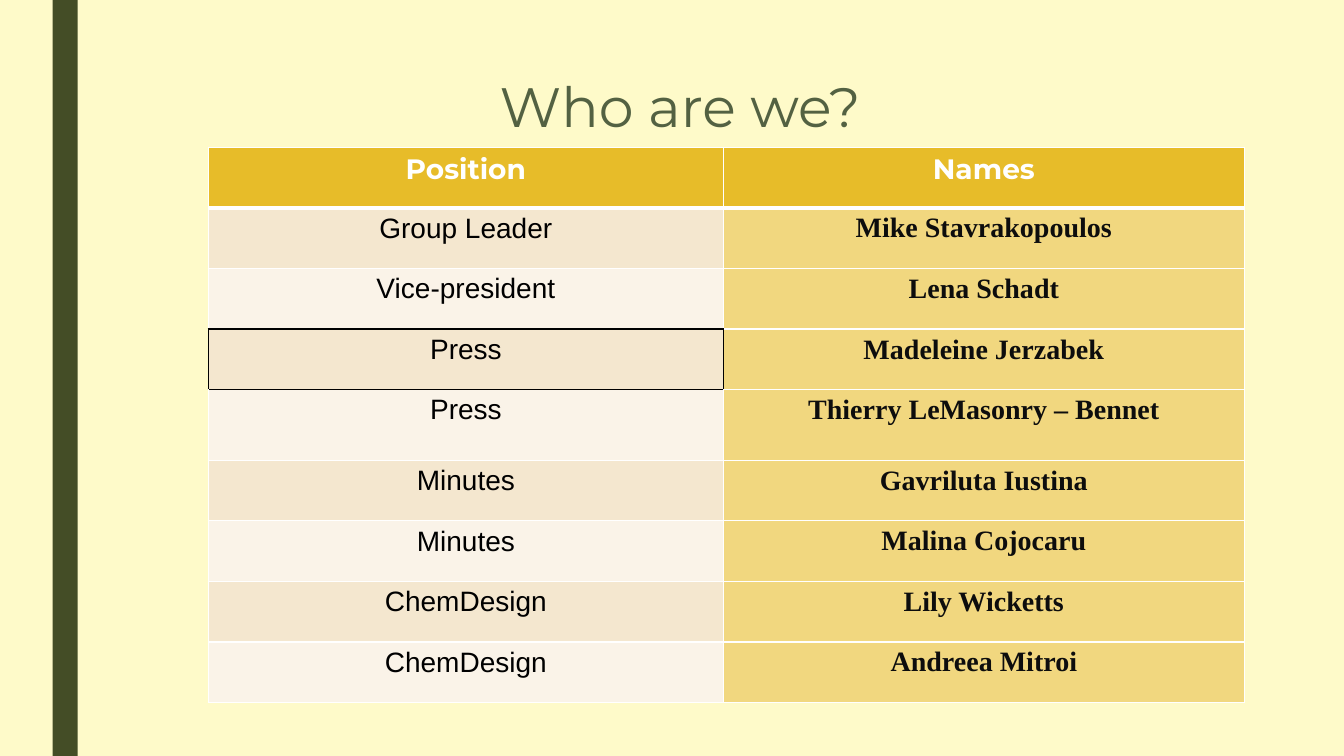
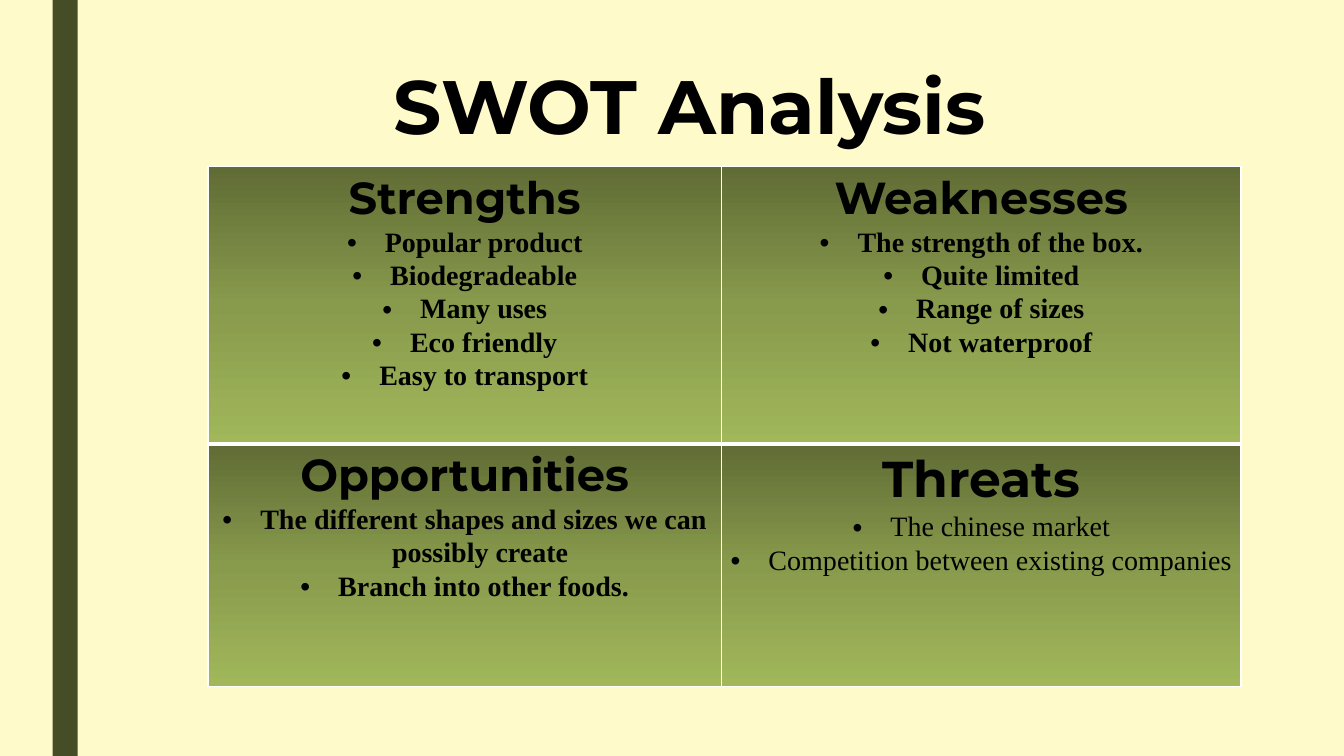
from dataclasses import dataclass

from pptx import Presentation
from pptx import oxml
from pptx.dml.color import RGBColor
from pptx.enum import shapes, text
from pptx.oxml import ns
from pptx.util import Pt


@dataclass(frozen=True)
class Theme:
    page: str = "FEFAC9"
    band: str = "444D26"
    title: str = "536142"
    white: str = "FFFFFF"
    black: str = "000000"
    name_text: str = "0D0D0D"
    header_fill: str = "E7BC29"
    name_fill: str = "F1D77F"
    row_fills: tuple = ("F4E7CF", "FAF3E8")
    gradient: tuple = ((0, "606C35"), (50, "889A4C"), (100, "A1B75A"))
    heading_font: str = "Montserrat"
    label_font: str = "Arial"
    body_font: str = "Times New Roman"
    title_size: float = 39.6
    big_title_size: float = 54
    heading_size: float = 32
    large_heading_size: float = 36
    body_size: float = 20
    thin: float = 1
    thick: float = 3


THEME = Theme()
WIDTH, HEIGHT = 960, 540
SIDES = "LRTB"

MEMBERS = [
    ("Group Leader", "Mike Stavrakopoulos"),
    ("Vice-president", "Lena Schadt"),
    ("Press", "Madeleine Jerzabek"),
    ("Press", "Thierry LeMasonry – Bennet"),
    ("Minutes", "Gavriluta Iustina"),
    ("Minutes", "Malina Cojocaru"),
    ("ChemDesign", "Lily Wicketts"),
    ("ChemDesign", "Andreea Mitroi"),
]

# Heading, heading size, bold items, items
SWOT = [
    [
        ("Strengths", THEME.heading_size, True,
         ["Popular product", "Biodegradeable", "Many uses", "Eco friendly",
          "Easy to transport"]),
        ("Weaknesses", THEME.heading_size, True,
         ["The strength of the box.", "Quite limited", "Range of sizes",
          "Not waterproof"]),
    ],
    [
        ("Opportunities", THEME.heading_size, True,
         ["The different shapes and sizes we can possibly create ",
          "Branch into other foods."]),
        ("Threats", THEME.large_heading_size, False,
         ["The chinese market", "Competition between existing companies"]),
    ],
]


class Deck:
    """Holds the theme, the presentation and the slide being built."""

    def __init__(self, theme):
        self.theme = theme
        self.presentation = Presentation()
        self.presentation.slide_width = Pt(WIDTH)
        self.presentation.slide_height = Pt(HEIGHT)
        self.slide = None
        self.layout = self.prepare_template()

    def prepare_template(self):
        """Colour the master and keep one layout with only its title."""
        master = self.presentation.slide_master
        self.fill(master.background.fill, self.theme.page)
        layouts = self.presentation.slide_layouts
        layout = layouts.get_by_name("Title Only")
        for unused in [item for item in layouts if item.name != layout.name]:
            layouts.remove(unused)
        footers = (shapes.PP_PLACEHOLDER.DATE, shapes.PP_PLACEHOLDER.FOOTER,
                   shapes.PP_PLACEHOLDER.SLIDE_NUMBER)
        for holder in [*master.placeholders, *layout.placeholders]:
            if holder.placeholder_format.type in footers:
                holder.element.getparent().remove(holder.element)
        return layout

    def add_slide(self):
        self.slide = self.presentation.slides.add_slide(self.layout)
        band = self.slide.shapes.add_shape(
            shapes.MSO_SHAPE.RECTANGLE, Pt(37.5), 0, Pt(18), Pt(HEIGHT))
        band.shadow.inherit = False
        self.fill(band.fill, self.theme.band)
        band.line.fill.background()

    def fill(self, fill, color):
        fill.solid()
        fill.fore_color.rgb = RGBColor.from_string(color)

    def run(self, paragraph, words, font, size, color, bold=False):
        run = paragraph.add_run()
        run.text = words
        run.font.name = font
        run.font.size = Pt(size)
        run.font.bold = bold
        run.font.color.rgb = RGBColor.from_string(color)

    def title(self, words, box, size, color, bold=False,
              align=text.PP_ALIGN.CENTER, spacing=1.0):
        shape = self.slide.shapes.title
        shape.left, shape.top, shape.width, shape.height = map(Pt, box)
        frame = shape.text_frame
        frame.auto_size = text.MSO_AUTO_SIZE.NONE
        frame.vertical_anchor = text.MSO_ANCHOR.MIDDLE
        paragraph = frame.paragraphs[0]
        paragraph.alignment = align
        paragraph.line_spacing = spacing
        self.run(paragraph, words, self.theme.heading_font, size, color, bold)

    def table(self, left, top, widths, heights):
        table = self.slide.shapes.add_table(
            len(heights), len(widths), Pt(left), Pt(top),
            Pt(sum(widths)), Pt(sum(heights))).table
        table.first_row = table.horz_banding = False
        for column, width in zip(table.columns, widths):
            column.width = Pt(width)
        for row, height in zip(table.rows, heights):
            row.height = Pt(height)
        for cell in table.iter_cells():
            self.border(cell, SIDES, self.theme.white, self.theme.thin)
        return table

    def border(self, cell, sides, color, width):
        properties = cell._tc.get_or_add_tcPr()
        for side in sides:
            previous = properties.find(ns.qn(f"a:ln{side}"))
            if previous is not None:
                properties.remove(previous)
            line = oxml.parse_xml(
                f'<a:ln{side} {ns.nsdecls("a")} w="{Pt(width)}"><a:solidFill>'
                f'<a:srgbClr val="{color}"/></a:solidFill></a:ln{side}>')
            properties.insert(SIDES.index(side), line)

    def rule_below(self, table, row):
        """Draw a thick line between this row and the next."""
        for column in range(len(table.columns)):
            for cell, side in ((table.cell(row, column), "B"),
                               (table.cell(row + 1, column), "T")):
                self.border(cell, side, self.theme.white, self.theme.thick)

    def outline(self, table, row, column):
        """Outline a cell in black, including its neighbours' shared edges."""
        for cell, sides in ((table.cell(row, column), SIDES),
                            (table.cell(row - 1, column), "B"),
                            (table.cell(row + 1, column), "T"),
                            (table.cell(row, column + 1), "L")):
            self.border(cell, sides, self.theme.black, self.theme.thin)

    def cell(self, cell, words, fill, font, color, bold):
        self.fill(cell.fill, fill)
        paragraph = cell.text_frame.paragraphs[0]
        paragraph.alignment = text.PP_ALIGN.CENTER
        self.run(paragraph, words, font, self.theme.body_size, color, bold)

    def gradient(self, cell):
        stops = "".join(
            f'<a:gs pos="{percent * 1000}"><a:srgbClr val="{color}"/></a:gs>'
            for percent, color in self.theme.gradient)
        cell._tc.get_or_add_tcPr().append(oxml.parse_xml(
            f'<a:gradFill {ns.nsdecls("a")} rotWithShape="1">'
            f'<a:gsLst>{stops}</a:gsLst>'
            '<a:lin ang="5400000" scaled="0"/></a:gradFill>'))

    def bullet(self, paragraph):
        properties = paragraph._p.get_or_add_pPr()
        properties.set("marL", str(Pt(27)))
        properties.set("indent", str(-Pt(27)))
        for content in ('buFont {} typeface="Arial"', 'buChar {} char="•"'):
            properties.append(oxml.parse_xml(
                f'<a:{content.format(ns.nsdecls("a"))}/>'))

    def list_cell(self, cell, heading, heading_size, bold, items):
        theme = self.theme
        self.gradient(cell)
        cell.margin_left = cell.margin_right = Pt(5)
        cell.margin_top = cell.margin_bottom = 0
        frame = cell.text_frame
        first = frame.paragraphs[0]
        self.run(first, heading, theme.heading_font, heading_size,
                 theme.black, True)
        entries = [frame.add_paragraph() for _ in items]
        for paragraph in [first, *entries]:
            paragraph.alignment = text.PP_ALIGN.CENTER
            paragraph.line_spacing = 1.07
        for paragraph, item in zip(entries, items):
            self.bullet(paragraph)
            self.run(paragraph, item, theme.body_font, theme.body_size,
                     theme.black, bold)


def build_team(deck):
    theme = deck.theme
    deck.title("Who are we?", (107.8, 52.8, 756, 51), theme.title_size,
               theme.title, spacing=0.89)
    heights = [43.3] * (len(MEMBERS) + 1)
    heights[4] = 50.4
    table = deck.table(148.8, 105.1, [368, 372], heights)
    for column, label in enumerate(("Position", "Names")):
        deck.cell(table.cell(0, column), label, theme.header_fill,
                  theme.heading_font, theme.white, True)
    for row, (position, name) in enumerate(MEMBERS, start=1):
        deck.cell(table.cell(row, 0), position, theme.row_fills[(row - 1) % 2],
                  theme.label_font, theme.black, False)
        deck.cell(table.cell(row, 1), name, theme.name_fill,
                  theme.body_font, theme.name_text, True)
    deck.rule_below(table, 0)
    deck.outline(table, 3, 0)


def build_swot(deck):
    theme = deck.theme
    deck.title("SWOT Analysis", (273.6, 38.3, 566.6, 73), theme.big_title_size,
               theme.black, bold=True, align=text.PP_ALIGN.LEFT)
    table = deck.table(148.5, 119.2, [367, 371], [198, 173])
    for row, quadrants in enumerate(SWOT):
        for column, quadrant in enumerate(quadrants):
            deck.list_cell(table.cell(row, column), *quadrant)
    deck.rule_below(table, 0)


def main():
    deck = Deck(THEME)
    for build in (build_team, build_swot):
        deck.add_slide()
        build(deck)
    deck.presentation.save("out.pptx")


if __name__ == "__main__":
    main()
